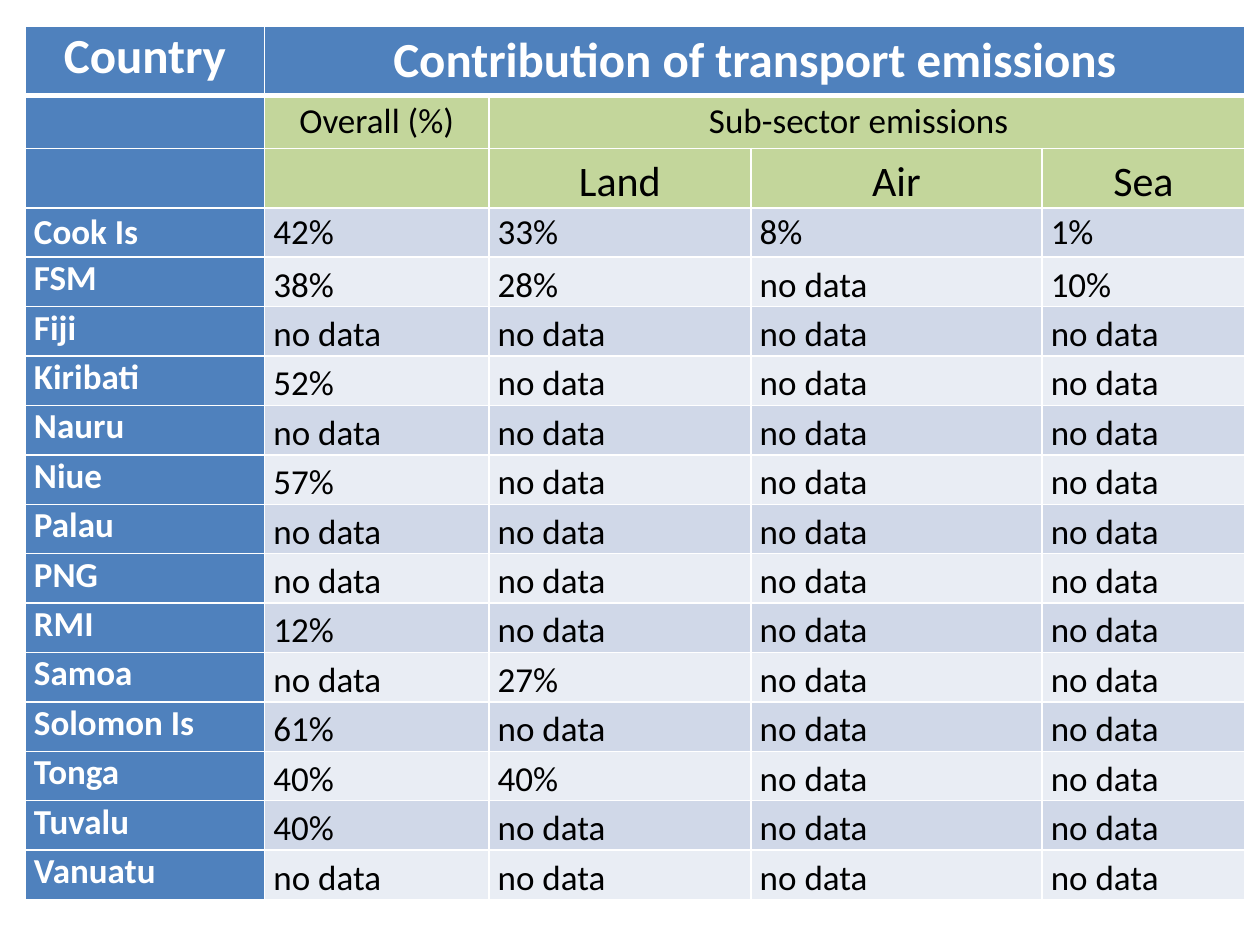
import dataclasses
import typing
import lxml.etree
import pptx
import pptx.dml.color
import pptx.enum.text
import pptx.oxml.ns
import pptx.util

RGBColor = pptx.dml.color.RGBColor
Align = pptx.enum.text.PP_ALIGN
Anchor = pptx.enum.text.MSO_ANCHOR
WHITE = RGBColor(0xFF, 0xFF, 0xFF)
BLACK = RGBColor(0, 0, 0)
BLUE = RGBColor(0x4F, 0x81, 0xBD)
GREEN = RGBColor(0xC3, 0xD6, 0x9B)
BANDS = RGBColor(0xD0, 0xD8, 0xE8), RGBColor(0xE9, 0xED, 0xF4)

WIDE, HIGH = pptx.util.Inches(10), pptx.util.Inches(7.5)
LEFT, TOP, TALL = 0.02, 0.028, 0.924
COLS = 0.19, 0.178, 0.208, 0.231, 0.161
HEADS = 0.073, 0.056, 0.063
NONE = "no data"
DATA = {
    "Cook Is": ("42%", "33%", "8%", "1%"),
    "FSM": ("38%", "28%", NONE, "10%"),
    "Fiji": (NONE,),
    "Kiribati": ("52%",),
    "Nauru": (NONE,),
    "Niue": ("57%",),
    "Palau": (NONE,),
    "PNG": (NONE,),
    "RMI": ("12%",),
    "Samoa": (NONE, "27%"),
    "Solomon Is": ("61%",),
    "Tonga": ("40%", "40%"),
    "Tuvalu": ("40%",),
    "Vanuatu": (NONE,),
}


@dataclasses.dataclass
class Item:
    row: int
    col: int
    text: str
    fill: RGBColor
    size: int = 20
    bold: bool = False
    color: RGBColor = BLACK
    align: Align = Align.CENTER
    anchor: Anchor = Anchor.MIDDLE
    span: int = 1
    right: float = 0.07


def edge(cell: typing.Any, row: int) -> None:
    props = cell._tc.get_or_add_tcPr()
    for spot, side in enumerate("LRTB"):
        thick = (side == "B" and row == 0) or (side == "T" and row == 1)
        line = lxml.etree.Element(
            pptx.oxml.ns.qn(f"a:ln{side}"), w=str(pptx.util.Pt(3 if thick else 1))
        )
        fill = lxml.etree.SubElement(line, pptx.oxml.ns.qn("a:solidFill"))
        lxml.etree.SubElement(fill, pptx.oxml.ns.qn("a:srgbClr"), val=str(WHITE))
        props.insert(spot, line)


def draw(table: typing.Any, item: Item) -> None:
    cell = table.cell(item.row, item.col)
    last = item.col + item.span - 1
    if item.span > 1:
        cell.merge(table.cell(item.row, last))
    for col in range(item.col, last + 1):
        part = table.cell(item.row, col)
        part.fill.solid()
        part.fill.fore_color.rgb = item.fill
        edge(part, item.row)
    frame = {
        "margin_left": pptx.util.Inches(0.07),
        "margin_right": pptx.util.Inches(item.right),
        "margin_top": 0,
        "margin_bottom": 0,
        "vertical_anchor": item.anchor,
    }
    for name, value in frame.items():
        setattr(cell, name, value)
    if not item.text:
        return
    para = cell.text_frame.paragraphs[0]
    para.alignment = item.align
    run = para.add_run()
    run.text = item.text
    style = {"name": "Calibri", "size": pptx.util.Pt(item.size), "bold": item.bold}
    for name, value in style.items():
        setattr(run.font, name, value)
    run.font.color.rgb = item.color


def heads() -> list[Item]:
    title = {"fill": BLUE, "size": 28, "bold": True, "color": WHITE}
    items = [
        Item(0, 0, "Country", anchor=Anchor.TOP, **title),
        Item(0, 1, "Contribution of transport emissions", span=4, **title),
        Item(1, 0, "", BLUE),
        Item(1, 1, "Overall (%)", GREEN),
        Item(1, 2, "Sub-sector emissions", GREEN, span=3, right=0.2),
        Item(2, 0, "", BLUE),
        Item(2, 1, "", GREEN),
    ]
    for col, text in enumerate(("Land", "Air", "Sea"), 2):
        items.append(Item(2, col, text, GREEN, 24, anchor=Anchor.BOTTOM))
    return items


def body() -> list[Item]:
    items = []
    for num, (land, known) in enumerate(DATA.items()):
        row = num + len(HEADS)
        name, value = (Anchor.TOP, Anchor.BOTTOM) if num else (Anchor.MIDDLE,) * 2
        items.append(Item(row, 0, land, BLUE, 20, True, WHITE, Align.JUSTIFY, name))
        cells = known + (NONE,) * (len(COLS) - 1 - len(known))
        for col, text in enumerate(cells, 1):
            items.append(
                Item(row, col, text, BANDS[num % 2], align=Align.JUSTIFY, anchor=value)
            )
    return items


def main() -> None:
    deck = pptx.Presentation()
    deck.slide_width, deck.slide_height = WIDE, HIGH
    slide = deck.slides.add_slide(deck.slide_layouts[6])
    rows = HEADS + ((TALL - sum(HEADS)) / len(DATA),) * len(DATA)
    table = slide.shapes.add_table(
        len(rows), len(COLS), int(LEFT * WIDE), int(TOP * HIGH),
        int(sum(COLS) * WIDE), int(TALL * HIGH),
    ).table
    for name in ("first_row", "horz_banding"):
        setattr(table, name, False)
    for col, share in zip(table.columns, COLS):
        col.width = int(share * WIDE)
    for row, share in zip(table.rows, rows):
        row.height = int(share * HIGH)
    for item in heads() + body():
        draw(table, item)
    deck.save("out.pptx")


if __name__ == "__main__":
    main()
